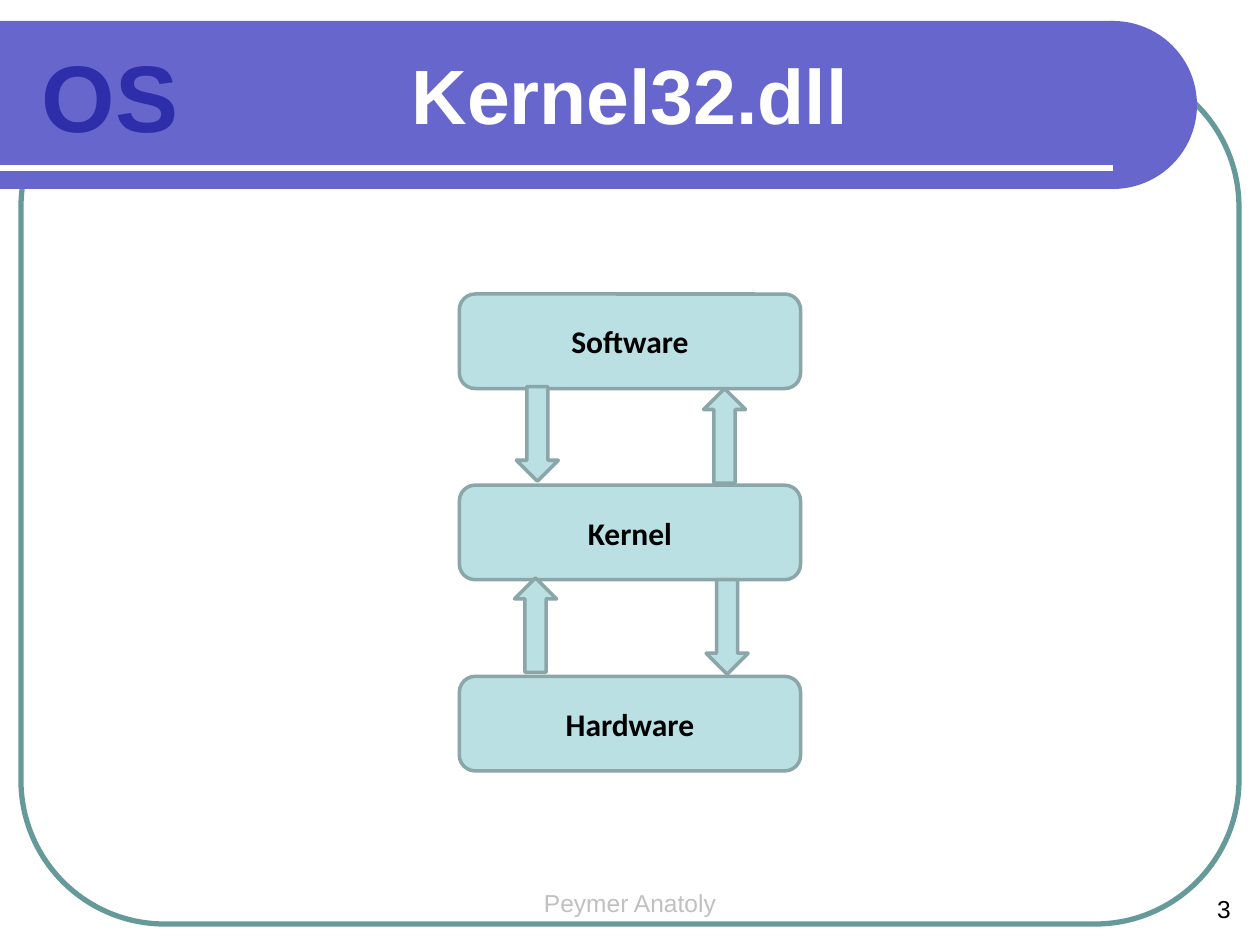
from lxml.etree import SubElement as sub
from pptx import Presentation
from pptx.dml.color import RGBColor as RGB
from pptx.enum.shapes import MSO_CONNECTOR as LINK, MSO_SHAPE as SHAPE
from pptx.enum.text import MSO_ANCHOR as ANCHOR, PP_ALIGN as ALIGN
from pptx.oxml.ns import qn
from pptx.util import Pt

COLORS = {
    "band": "6666CC", "frame": "669999", "white": "FFFFFF", "black": "000000",
    "gray": "C0C0C0", "box": "BBE0E3", "edge": "8AA6A8",
}
MARK = [(0, "8080DA"), (75, "2E2EAA"), (100, "000097")]


def color(name):
    return RGB.from_string(COLORS[name])


def shape(slide, kind, box, fill=None, line=None, width=2):
    item = slide.shapes.add_shape(kind, *map(Pt, box))
    item.shadow.inherit = False
    if fill:
        item.fill.solid()
        item.fill.fore_color.rgb = color(fill)
    else:
        item.fill.background()
    if line:
        item.line.color.rgb = color(line)
        item.line.width = Pt(width)
    else:
        item.line.fill.background()
    return item


def write(item, text, size, tint=None, face="Arial", bold=False,
          align=ALIGN.CENTER, anchor=ANCHOR.TOP, side=7.2):
    frame = item.text_frame
    frame.word_wrap = True
    frame.vertical_anchor = anchor
    frame.margin_left = frame.margin_right = Pt(side)
    para = frame.paragraphs[0]
    para.text = text
    para.alignment = align
    font = para.font
    font.size, font.name, font.bold = Pt(size), face, bold
    if tint:
        font.color.rgb = color(tint)
    return para


def label(slide, box, text, size, tint=None, **style):
    item = slide.shapes.add_textbox(*map(Pt, box))
    return write(item, text, size, tint, **style)


def shade(run, stops):
    """Give a run a vertical gradient."""
    fill = run.font.fill
    fill.gradient()
    fill.gradient_angle = 270
    items = run.font._element.find(".//" + qn("a:gsLst"))
    for old in list(items):
        items.remove(old)
    for place, tone in stops:
        stop = sub(items, qn("a:gs"), pos=str(place * 1000))
        sub(stop, qn("a:srgbClr"), val=tone)


def footer(slide, x, y, w, h):
    label(slide, (x + (w - 132) / 2, y, 132, h), "Peymer Anatoly", 14, "gray")
    label(slide, (x + w - 57.6, y + 3.6, 48, h), "3", 14, "black",
          align=ALIGN.RIGHT)


def frame(slide, x, y, w, h):
    item = shape(slide, SHAPE.ROUNDED_RECTANGLE, (x, y, w, h),
                 line="frame", width=3)
    item.adjustments[0] = 0.167


def header(slide, x, y, w, h):
    # Band with a round right end
    flat = w - h / 2
    shape(slide, SHAPE.RECTANGLE, (x, y, flat, h), "band")
    shape(slide, SHAPE.OVAL, (x + w - h, y, h, h), "band")
    # White rule
    level = Pt(y + h - 12)
    rule = slide.shapes.add_connector(LINK.STRAIGHT, Pt(x), level,
                                      Pt(x + flat), level)
    rule.line.color.rgb = color("white")
    rule.line.width = Pt(3)
    sub(rule._element.spPr, qn("a:effectLst"))
    # Title and subject mark
    label(slide, (x + 234, y - 0.5, 252, 84), "Kernel32.dll", 44, "white",
          bold=True, anchor=ANCHOR.MIDDLE, side=0)
    mark = label(slide, (x + 12, y + 6, 102, 72.7), "OS", 54, bold=True)
    shade(mark.runs[0], MARK)


def stack(slide, x, y, w, h):
    tall = 54
    pitch = (h - tall) / 2
    # Layers
    for row, name in enumerate(("Software", "Kernel", "Hardware")):
        item = shape(slide, SHAPE.ROUNDED_RECTANGLE,
                     (x, y + row * pitch, w, tall), "box", "edge")
        write(item, name, 18, "black", face="Calibri", bold=True,
              anchor=ANCHOR.MIDDLE)
    # Arrows between layers: left, top, turn
    for left, top, turn in ((139.5, tall, 0), (32.5, tall - 1, 180),
                            (141, pitch + tall, 180),
                            (31.5, pitch + tall - 1, 0)):
        item = shape(slide, SHAPE.UP_ARROW, (x + left, y + top, 24, tall),
                     "box", "edge")
        item.rotation = turn


def main():
    deck = Presentation()
    deck.slide_width, deck.slide_height = Pt(720), Pt(540)
    slide = deck.slides.add_slide(deck.slide_layouts[6])
    footer(slide, 0, 504, 720, 25)
    frame(slide, 12, 36, 696, 492)
    header(slide, 0, 12, 684, 96)
    stack(slide, 262.5, 168, 195, 272.5)
    deck.save("out.pptx")


if __name__ == "__main__":
    main()
